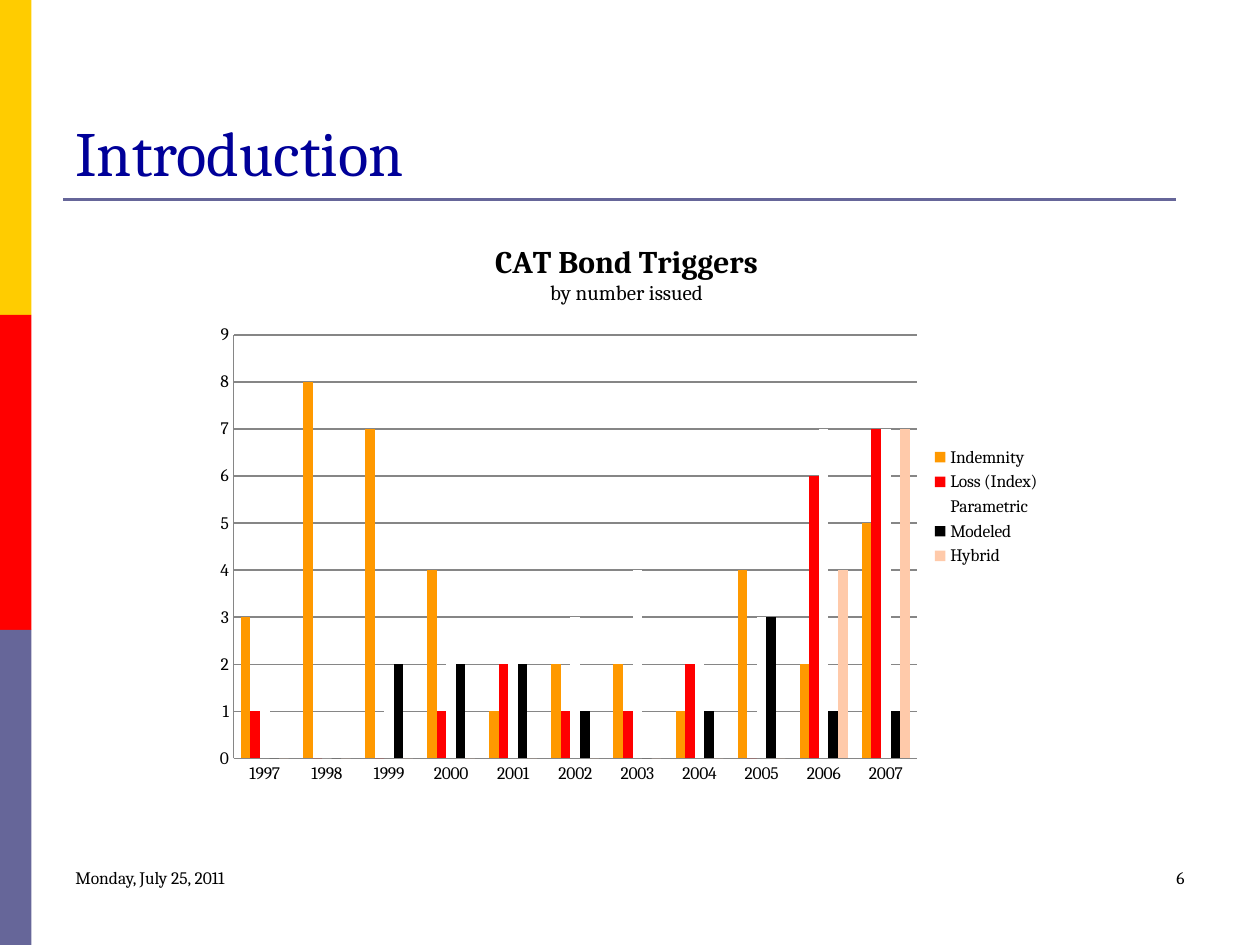
from lxml.etree import SubElement as Sub
from pptx import Presentation
from pptx.chart.data import CategoryChartData as Data
from pptx.dml.color import RGBColor as RGB
from pptx.enum.chart import XL_CHART_TYPE as Kind, XL_LEGEND_POSITION as Side, XL_TICK_MARK as Tick
from pptx.enum.shapes import MSO_CONNECTOR as Link, MSO_SHAPE as Form
from pptx.enum.text import MSO_ANCHOR as Anchor, PP_ALIGN as Align
from pptx.oxml.ns import qn
from pptx.util import Pt

FONT = "Cambria"
HUES = {"gold": "FFCC00", "red": "FF0000", "slate": "666699", "navy": "000099",
        "black": "000000", "white": "FFFFFF", "amber": "FF9900",
        "peach": "FFCAAA", "gray": "868686"}


def style(font, size, hue="black", bold=False):
    font.name = FONT
    font.size = Pt(size)
    font.bold = bold
    font.color.rgb = RGB.from_string(HUES[hue])


def write(text, box, size=10, hue="black", align=Align.LEFT, anchor=Anchor.TOP):
    frame = slide.shapes.add_textbox(*map(Pt, box)).text_frame
    frame.word_wrap = True
    frame.vertical_anchor = anchor
    para = frame.paragraphs[0]
    para.alignment = align
    run = para.add_run()
    run.text = text
    style(run.font, size, hue)


deck = Presentation()
deck.slide_width, deck.slide_height = Pt(720), Pt(540)
slide = deck.slides.add_slide(deck.slide_layouts[6])

for row, hue in enumerate(["gold", "red", "slate"]):
    band = slide.shapes.add_shape(Form.RECTANGLE, Pt(0), Pt(180 * row), Pt(18), Pt(180))
    band.shadow.inherit = False
    band.fill.solid()
    band.fill.fore_color.rgb = RGB.from_string(HUES[hue])
    band.line.fill.background()

rule = slide.shapes.add_connector(Link.STRAIGHT, Pt(36), Pt(114), Pt(672), Pt(114))
rule.line.color.rgb = RGB.from_string(HUES["slate"])
rule.line.width = Pt(1.5)
Sub(rule._element.spPr, qn("a:effectLst"))

write("Introduction", (36, 21.6, 648, 90), size=36, hue="navy", anchor=Anchor.BOTTOM)
write("Monday, July 25, 2011", (36, 492, 168, 36))
write("6", (516, 492, 168, 36), align=Align.RIGHT)

rows = [
    ("Indemnity", "amber", (3, 8, 7, 4, 1, 2, 2, 1, 4, 2, 5)),
    ("Loss (Index)", "red", (1, 0, 0, 1, 2, 1, 1, 2, 0, 6, 7)),
    ("Parametric", "white", (1, 0, 1, 2, 2, 3, 4, 2, 3, 7, 7)),
    ("Modeled", "black", (0, 0, 2, 2, 2, 1, 0, 1, 3, 1, 1)),
    ("Hybrid", "peach", (0, 0, 0, 0, 0, 0, 0, 0, 0, 4, 7)),
]
data = Data(number_format="0")
data.categories = [str(year) for year in range(1997, 2008)]
for name, hue, vals in rows:
    data.add_series(name, vals)
chart = slide.shapes.add_chart(
    Kind.COLUMN_CLUSTERED, Pt(114), Pt(126), Pt(488), Pt(327), data).chart
style(chart.font, 10)

chart.has_title = True
head = chart.chart_title.text_frame
for text, size, bold in [("CAT Bond Triggers", 18, True), ("by number issued", 12, False)]:
    para = head.add_paragraph() if head.text else head.paragraphs[0]
    run = para.add_run()
    run.text = text
    style(run.font, size, bold=bold)
chart.chart_title.include_in_layout = False

chart.has_legend = True
chart.legend.position = Side.RIGHT
chart.legend.include_in_layout = False
style(chart.legend.font, 10)

plot = chart.plots[0]
plot.gap_width = 150
plot.overlap = 0
plot.vary_by_categories = False
for bars, (name, hue, vals) in zip(plot.series, rows):
    bars.format.fill.solid()
    bars.format.fill.fore_color.rgb = RGB.from_string(HUES[hue])
    bars.invert_if_negative = False

gray = RGB.from_string(HUES["gray"])
value = chart.value_axis
for axis in (chart.category_axis, value):
    axis.major_tick_mark = axis.minor_tick_mark = Tick.NONE
    axis.format.line.color.rgb = gray
    style(axis.tick_labels.font, 10)
value.minimum_scale, value.maximum_scale, value.major_unit = 0, 9, 1
value.has_major_gridlines = True
value.major_gridlines.format.line.color.rgb = gray
value.tick_labels.number_format = "0"
value.tick_labels.number_format_is_linked = False

area = chart._chartSpace.find(".//" + qn("c:plotArea"))
for old in area.findall(qn("c:layout")):
    area.remove(old)
layout = Sub(area, qn("c:layout"))
area.insert(0, layout)
manual = Sub(layout, qn("c:manualLayout"))
for tag, val in [("layoutTarget", "inner"), ("xMode", "edge"), ("yMode", "edge"),
                 ("x", "0.04"), ("y", "0.2"), ("w", "0.8"), ("h", "0.74")]:
    Sub(manual, qn("c:" + tag)).set("val", val)

deck.save("out.pptx")
